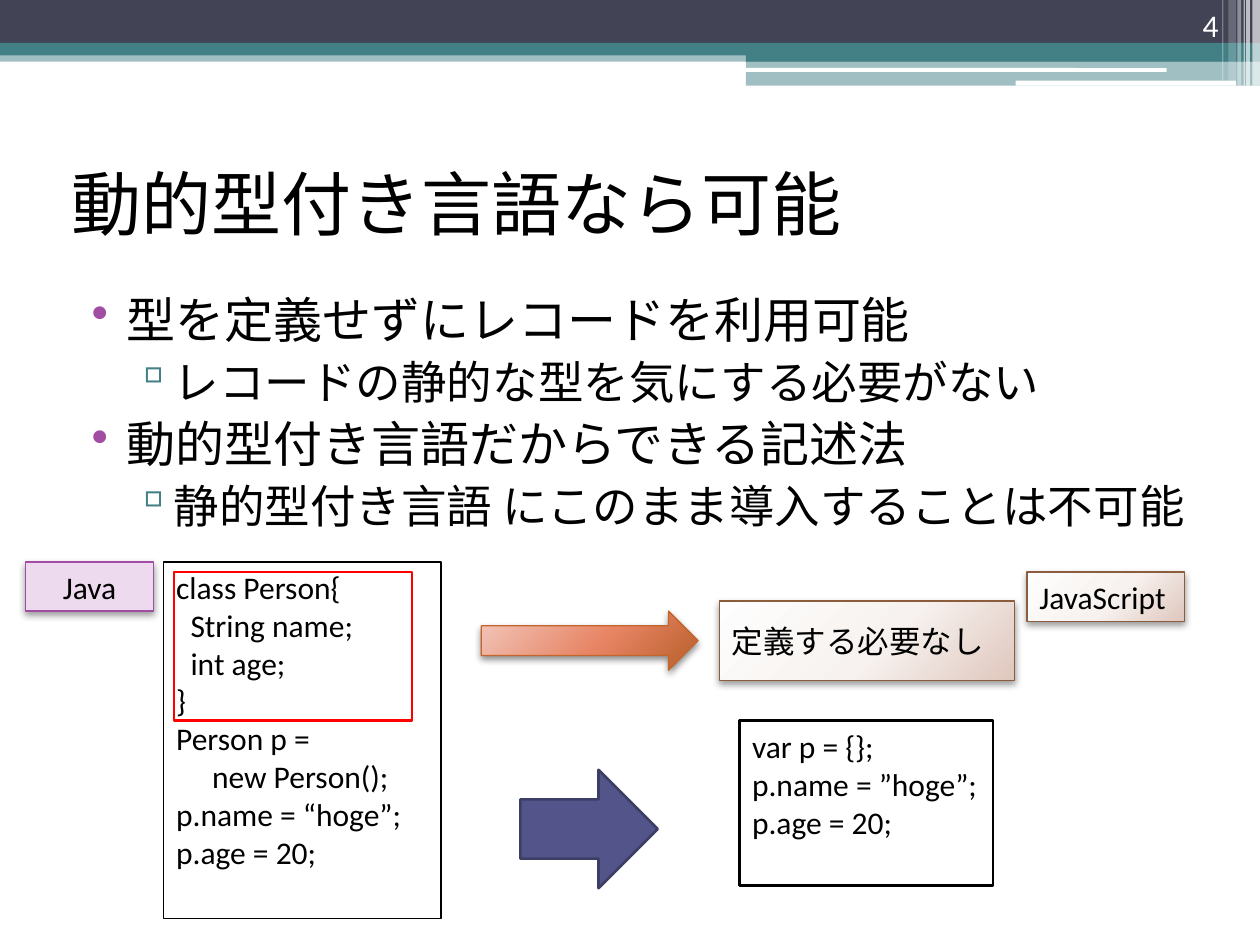
from dataclasses import dataclass

import pptx
import pptx.dml.color
import pptx.enum.shapes
import pptx.enum.text
import pptx.oxml
import pptx.oxml.ns
import pptx.util

SHAPE = pptx.enum.shapes.MSO_SHAPE
ALIGN = pptx.enum.text.PP_ALIGN
ANCHOR = pptx.enum.text.MSO_ANCHOR
INCHES = pptx.util.Inches
qn = pptx.oxml.ns.qn


@dataclass(frozen=True)
class Theme:
    font: str = "Calibri"
    title_size: int = 40
    body_sizes: tuple = (28, 26)
    small_size: int = 18
    black: str = "000000"
    white: str = "FFFFFF"
    navy: str = "424456"
    teal: str = "438086"
    purple: str = "A04DA3"
    lilac: str = "EDDAEE"
    indigo: str = "53548A"
    indigo_edge: str = "3D3E66"
    brown: str = "8B5D3D"
    orange: str = "C4652D"
    red: str = "FF0000"
    pale_gradient: tuple = ((0, "FEFEFE"), (55, "F7F2EF"), (100, "DFC7BD"))
    orange_gradient: tuple = ((0, "F2C9BF"), (55, "E78463"), (100, "B75E2A"))


THEME = Theme()

TITLE = "動的型付き言語なら可能"
BULLETS = [  # level, text
    (0, "型を定義せずにレコードを利用可能"),
    (1, "レコードの静的な型を気にする必要がない"),
    (0, "動的型付き言語だからできる記述法"),
    (1, "静的型付き言語 にこのまま導入することは不可能"),
]
BULLET_STYLES = [  # character, colour, left margin, hanging indent
    ("•", THEME.purple, 0.4, -0.28),
    ("▫", THEME.teal, 0.72, -0.27),
]
JAVA_CODE = [  # indent in spaces, text
    (0, "class Person{"), (2, "String name;"), (2, "int age;"), (0, "}"),
    (0, "Person p ="), (5, "new Person();"), (0, "p.name = “hoge”;"), (0, "p.age = 20;"),
]
JAVASCRIPT_CODE = [(0, "var p = {};"), (0, "p.name = ”hoge”;"), (0, "p.age = 20;")]
SPACE_WIDTH = 0.057

BANDS = [  # box, colour, opacity
    ((0, 0.4, 10, 0.09), THEME.teal, 50),
    ((0, 0, 10, 0.34), THEME.navy, 100),
    ((0, 0.34, 10, 0.1), THEME.teal, 100),
    ((5.92, 0.39, 4.08, 0.1), THEME.teal, 100),
    ((5.92, 0.48, 4.08, 0.2), THEME.teal, 50),
]
RULES = [(5.91, 0.54, 3.35, 0.03), (8.06, 0.64, 1.75, 0.04)]
STRIPES = [  # left, width, height, opacity
    (9.94, 0.06, 0.68, 65), (9.89, 0.03, 0.68, 65), (9.87, 0.01, 0.68, 60),
    (9.82, 0.03, 0.68, 40), (9.75, 0.06, 0.64, 20), (9.7, 0.01, 0.64, 30),
]


def rgb(value):
    return pptx.dml.color.RGBColor.from_string(value)


def add_xml(parent, tag, **attributes):
    child = pptx.oxml.parse_xml(f'<{tag} {pptx.oxml.ns.nsdecls("a")}/>')
    for name, value in attributes.items():
        child.set(name, str(value))
    parent.append(child)
    return child


def add_color(parent, color, opacity=100):
    element = add_xml(parent, "a:srgbClr", val=color)
    if opacity < 100:
        add_xml(element, "a:alpha", val=opacity * 1000)


def fill_radial(shape, stops):
    """Fill with a circular gradient centred beyond the upper left corner."""
    shape.fill.gradient()
    gradient = shape.element.spPr.find(qn("a:gradFill"))
    for child in list(gradient):
        gradient.remove(child)
    stop_list = add_xml(gradient, "a:gsLst")
    for position, color in stops:
        add_color(add_xml(stop_list, "a:gs", pos=position * 1000), color)
    circle = add_xml(gradient, "a:path", path="circle")
    add_xml(circle, "a:fillToRect", l=-40000, t=-90000, r=140000, b=190000)


def add_shape(slide, box, kind=SHAPE.RECTANGLE, fill=None, opacity=100,
              gradient=None, line=None, line_width=0.75, shadow=0):
    """Add a preset shape; shadow is the opacity of a soft drop shadow."""
    shape = slide.shapes.add_shape(kind, *map(INCHES, box))
    shape.shadow.inherit = False
    if gradient:
        fill_radial(shape, gradient)
    elif fill:
        shape.fill.solid()
        shape.fill.fore_color.rgb = rgb(fill)
        if opacity < 100:
            color = shape.element.spPr.find(qn("a:solidFill"))[0]
            add_xml(color, "a:alpha", val=opacity * 1000)
    else:
        shape.fill.background()
    if line:
        shape.line.color.rgb = rgb(line)
        shape.line.width = pptx.util.Pt(line_width)
    else:
        shape.line.fill.background()
    if shadow:
        effects = shape.element.spPr.find(qn("a:effectLst"))
        outer = add_xml(effects, "a:outerShdw", blurRad=pptx.util.Pt(4.1),
                        dist=pptx.util.Pt(2), dir=5400000, rotWithShape=0)
        add_color(outer, THEME.black, shadow)
    return shape


def write(shape, lines, size=THEME.small_size, color=THEME.black,
          align=ALIGN.LEFT, anchor=ANCHOR.MIDDLE, wrap=True):
    """Write (indent in spaces, text) lines and return their paragraphs."""
    frame = shape.text_frame
    frame.auto_size = pptx.enum.text.MSO_AUTO_SIZE.NONE
    frame.word_wrap = wrap
    frame.vertical_anchor = anchor
    frame.text = "\n".join(text for _, text in lines)
    for paragraph, (indent, _) in zip(frame.paragraphs, lines):
        paragraph.alignment = align
        paragraph.font.size = pptx.util.Pt(size)
        paragraph.font.name = THEME.font
        paragraph.font.color.rgb = rgb(color)
        if indent:
            paragraph._p.get_or_add_pPr().set("marL", str(INCHES(indent * SPACE_WIDTH)))
    return frame.paragraphs


def add_header(slide):
    for box, color, opacity in BANDS:
        add_shape(slide, box, fill=color, opacity=opacity)
    for box in RULES:
        add_shape(slide, box, SHAPE.ROUNDED_RECTANGLE, fill=THEME.white)
    for left, width, height, opacity in STRIPES:
        add_shape(slide, (left, 0, width, height), fill=THEME.white, opacity=opacity)
    number = slide.shapes.add_textbox(*map(INCHES, (8.94, 0, 0.83, 0.4)))
    write(number, [(0, "4")], color=THEME.white, align=ALIGN.RIGHT, anchor=ANCHOR.BOTTOM)


def add_bullets(slide):
    body = slide.shapes.add_textbox(*map(INCHES, (0.51, 2.25, 9, 2.15)))
    paragraphs = write(body, [(0, text) for _, text in BULLETS], anchor=ANCHOR.TOP)
    for paragraph, (level, _) in zip(paragraphs, BULLETS):
        character, color, margin, hanging = BULLET_STYLES[level]
        paragraph.level = level
        paragraph.space_before = pptx.util.Pt(3)
        paragraph.font.size = pptx.util.Pt(THEME.body_sizes[level])
        properties = paragraph._p.get_or_add_pPr()
        properties.set("marL", str(INCHES(margin)))
        properties.set("indent", str(INCHES(hanging)))
        bullet = pptx.oxml.parse_xml(
            f'<a:buClr {pptx.oxml.ns.nsdecls("a")}><a:srgbClr val="{color}"/></a:buClr>')
        properties.find(qn("a:defRPr")).addprevious(bullet)
        mark = add_xml(properties, "a:buChar", char=character)
        bullet.addnext(mark)


def add_comparison(slide):
    pale = dict(gradient=THEME.pale_gradient, line=THEME.brown, shadow=40)
    add_shape(slide, (4.13, 6.11, 1.09, 0.94), SHAPE.RIGHT_ARROW,
              fill=THEME.indigo, line=THEME.indigo_edge, line_width=1.5)
    write(add_shape(slide, (8.15, 4.54, 1.25, 0.39), **pale), [(0, "JavaScript")])
    java = add_shape(slide, (0.2, 4.46, 1.02, 0.39), fill=THEME.lilac,
                     line=THEME.purple, shadow=40)
    write(java, [(0, "Java")], align=ALIGN.CENTER)
    write(add_shape(slide, (5.71, 4.77, 2.34, 0.63), **pale), [(0, "定義する必要なし")])
    add_shape(slide, (3.82, 4.85, 1.72, 0.47), SHAPE.RIGHT_ARROW,
              gradient=THEME.orange_gradient, line=THEME.orange, shadow=45)
    java_code = add_shape(slide, (1.3, 4.46, 2.2, 2.83), line=THEME.black)
    write(java_code, JAVA_CODE, anchor=ANCHOR.TOP)
    script_code = add_shape(slide, (5.87, 5.72, 2.01, 1.31), line=THEME.black, line_width=1.5)
    write(script_code, JAVASCRIPT_CODE, anchor=ANCHOR.TOP, wrap=False)
    add_shape(slide, (1.38, 4.54, 1.89, 1.18), line=THEME.red, line_width=1.5)


def main():
    presentation = pptx.Presentation()
    presentation.slide_width, presentation.slide_height = INCHES(10), INCHES(7.5)
    slide = presentation.slides.add_slide(presentation.slide_layouts.get_by_name("Title Only"))
    title = slide.shapes.title
    title.left, title.top, title.width, title.height = map(INCHES, (0.47, 1.02, 9, 1.17))
    write(title, [(0, TITLE)], size=THEME.title_size)
    add_header(slide)
    add_bullets(slide)
    add_comparison(slide)
    presentation.save("out.pptx")


if __name__ == "__main__":
    main()
